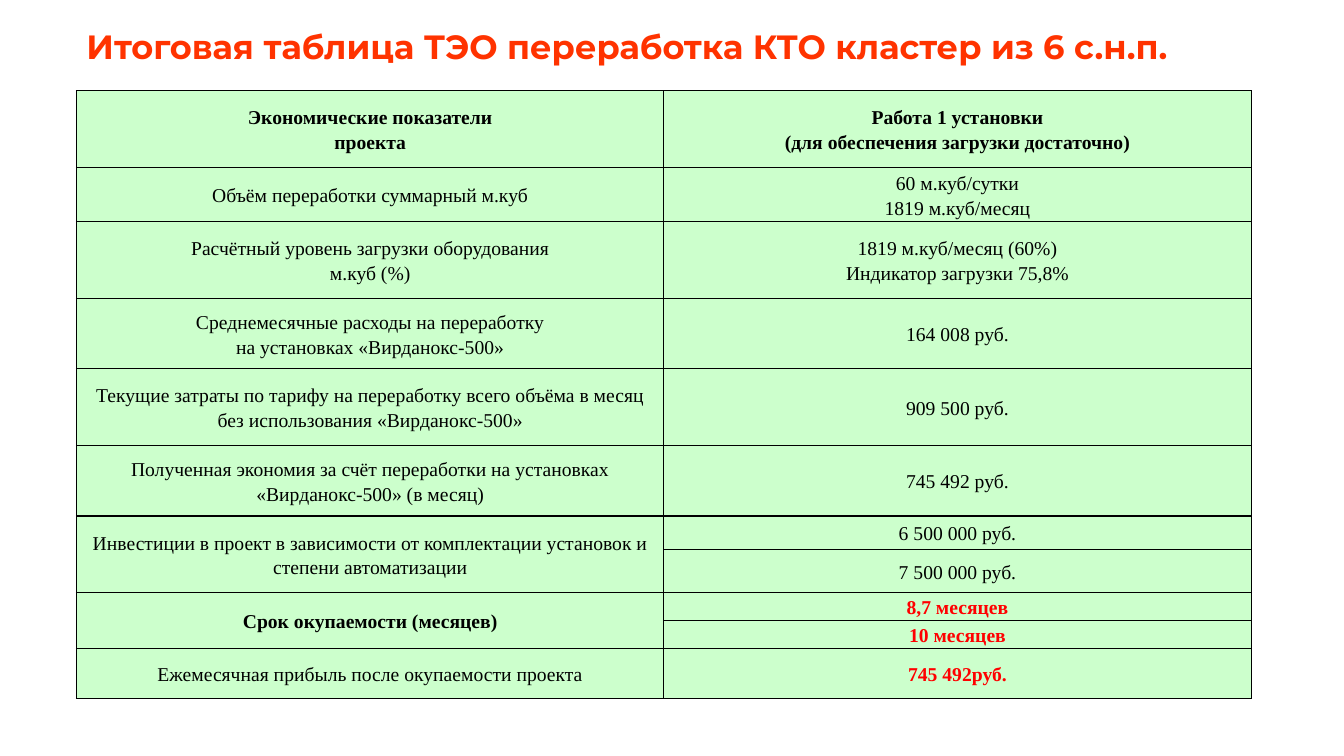
import lxml.etree
import pptx
import pptx.dml.color
import pptx.enum.text
import pptx.oxml.ns
import pptx.util

Cm = pptx.util.Cm
Pt = pptx.util.Pt

COLOURS = {
    "title": "FF3300",
    "cell": "CCFFCC",
    "text": "000000",
    "accent": "FF0000",
    "border": "000000",
}
LEFT, WIDTH = 1.93, 29.6

# Each row: height in cm, indicator, value; None continues the cell above
ROWS = [
    (1.93, "Экономические показатели\nпроекта",
     "Работа 1 установки\n(для обеспечения загрузки достаточно)"),
    (1.27, "Объём переработки суммарный м.куб",
     "60 м.куб/сутки\n1819 м.куб/месяц"),
    (1.93, "Расчётный уровень загрузки оборудования\nм.куб (%)",
     "1819 м.куб/месяц (60%)\nИндикатор загрузки 75,8%"),
    (1.78, "Среднемесячные расходы на переработку\nна установках «Вирданокс-500»",
     "164 008 руб."),
    (1.93, "Текущие затраты по тарифу на переработку всего объёма в месяц "
           "без использования «Вирданокс-500»", "909 500 руб."),
    (1.78, "Полученная экономия за счёт переработки на установках "
           "«Вирданокс-500» (в месяц)", "745 492 руб."),
    (0.84, "Инвестиции в проект в зависимости от комплектации установок "
           "и степени автоматизации", "6 500 000 руб."),
    (1.09, None, "7 500 000 руб."),
    (0.71, "Срок окупаемости (месяцев)", "8,7 месяцев"),
    (0.69, None, "10 месяцев"),
    (1.27, "Ежемесячная прибыль после окупаемости проекта", "745 492руб."),
]
HEADER_ROW, PAYBACK_ROW = 0, 8


def colour(name):
    return pptx.dml.color.RGBColor.from_string(COLOURS[name])


def style_font(font, family, size, colour_name, bold):
    font.name = family
    font.size = Pt(size)
    font.bold = bold
    font.color.rgb = colour(colour_name)


def add_title(page, text):
    box = page.shapes.add_textbox(Cm(LEFT), Cm(0.53), Cm(WIDTH), Cm(1.28))
    frame = box.text_frame
    frame.word_wrap = True
    frame.auto_size = pptx.enum.text.MSO_AUTO_SIZE.SHAPE_TO_FIT_TEXT
    frame.text = text
    style_font(frame.paragraphs[0].font, "Montserrat", 24, "title", True)


def add_borders(cell):
    # Border elements must come before the cell fill
    properties = cell._tc.get_or_add_tcPr()
    for position, side in enumerate(("a:lnL", "a:lnR", "a:lnT", "a:lnB")):
        line = lxml.etree.Element(pptx.oxml.ns.qn(side), w=str(Pt(1)))
        fill = lxml.etree.SubElement(line, pptx.oxml.ns.qn("a:solidFill"))
        lxml.etree.SubElement(fill, pptx.oxml.ns.qn("a:srgbClr"), val=COLOURS["border"])
        properties.insert(position, line)


def format_cell(cell):
    cell.fill.solid()
    cell.fill.fore_color.rgb = colour("cell")
    cell.vertical_anchor = pptx.enum.text.MSO_ANCHOR.MIDDLE
    cell.margin_left = cell.margin_right = Cm(0.13)
    cell.margin_top = cell.margin_bottom = Cm(0)
    add_borders(cell)


def fill_cell(cell, text, colour_name, bold):
    cell.text_frame.text = text
    for para in cell.text_frame.paragraphs:
        para.alignment = pptx.enum.text.PP_ALIGN.CENTER
        para.line_spacing = 1.15
        style_font(para.font, "Times New Roman", 14, colour_name, bold)


def add_indicator_table(page):
    height = sum(row[0] for row in ROWS)
    table = page.shapes.add_table(
        len(ROWS), 2, Cm(LEFT), Cm(2.29), Cm(WIDTH), Cm(height)).table
    for column in table.columns:
        column.width = Cm(WIDTH / 2)
    for index, (row_height, indicator, value) in enumerate(ROWS):
        table.rows[index].height = Cm(row_height)
        label_cell, value_cell = table.cell(index, 0), table.cell(index, 1)
        format_cell(label_cell)
        format_cell(value_cell)

        # Results from the payback row down are red and bold
        result = index >= PAYBACK_ROW
        header = index == HEADER_ROW
        fill_cell(value_cell, value, "accent" if result else "text", result or header)
        if indicator is None:
            table.cell(index - 1, 0).merge(label_cell)
        else:
            fill_cell(label_cell, indicator, "text", index in (HEADER_ROW, PAYBACK_ROW))


def main():
    deck = pptx.Presentation()
    deck.slide_width, deck.slide_height = Cm(33.87), Cm(19.05)
    page = deck.slides.add_slide(deck.slide_layouts[6])
    add_title(page, "Итоговая таблица ТЭО переработка КТО кластер из 6 с.н.п.")
    add_indicator_table(page)
    deck.save("out.pptx")


if __name__ == "__main__":
    main()
